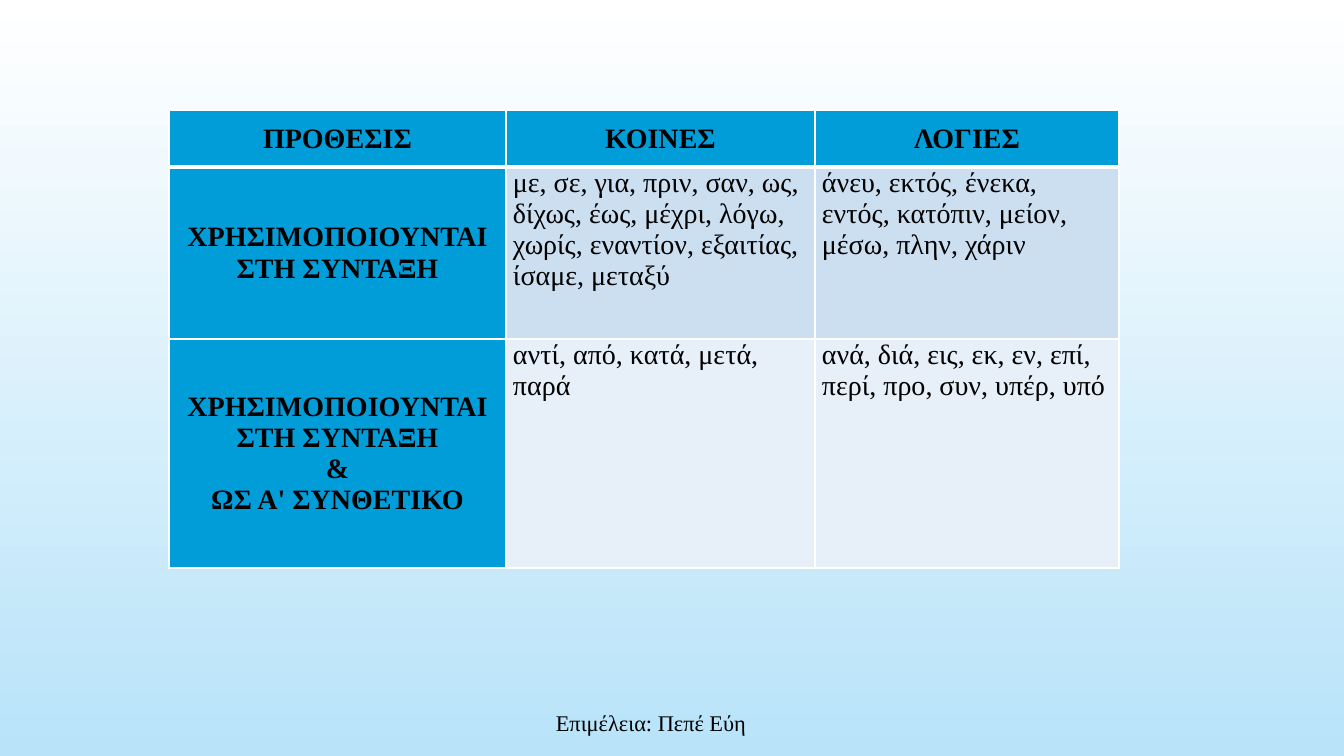
import dataclasses

import lxml.etree
import pptx
import pptx.dml.color
import pptx.enum.text
import pptx.oxml.ns
import pptx.util

EMU_PER_PX = 914400 / 100.8
CENTER = pptx.enum.text.PP_ALIGN.CENTER
LEFT = pptx.enum.text.PP_ALIGN.LEFT
MIDDLE = pptx.enum.text.MSO_ANCHOR.MIDDLE
TOP = pptx.enum.text.MSO_ANCHOR.TOP


@dataclasses.dataclass(frozen=True)
class Theme:
    font: str = "Times New Roman"
    text: str = "000000"
    heading_fill: str = "009DD9"
    row_fills: tuple = ("CCDFF1", "E7EFF8")
    border: str = "FFFFFF"
    background: tuple = ("FFFFFF", "B8E3F9")
    table_size: int = 20
    credit_size: int = 16


THEME = Theme()

HEADINGS = ("ΠΡΟΘΕΣΙΣ", "ΚΟΙΝΕΣ", "ΛΟΓΙΕΣ")
ROWS = (
    (
        "ΧΡΗΣΙΜΟΠΟΙΟΥΝΤΑΙ ΣΤΗ ΣΥΝΤΑΞΗ",
        "με, σε, για, πριν, σαν, ως, δίχως, έως, μέχρι, λόγω, χωρίς, "
        "εναντίον, εξαιτίας, ίσαμε, μεταξύ",
        "άνευ, εκτός, ένεκα, εντός, κατόπιν, μείον, μέσω, πλην, χάριν",
    ),
    (
        "ΧΡΗΣΙΜΟΠΟΙΟΥΝΤΑΙ ΣΤΗ ΣΥΝΤΑΞΗ\n&\nΩΣ Α' ΣΥΝΘΕΤΙΚΟ",
        "αντί, από, κατά, μετά, παρά",
        "ανά, διά, εις, εκ, εν, επί, περί, προ, συν, υπέρ, υπό",
    ),
)
COLUMN_WIDTHS = (337, 309, 304)
ROW_HEIGHTS = (57, 172, 229)


def px(length):
    return pptx.util.Emu(round(length * EMU_PER_PX))


def rgb(value):
    return pptx.dml.color.RGBColor.from_string(value)


def write_text(text_frame, text, *, size, bold=False, align=LEFT):
    text_frame.word_wrap = True
    text_frame.text = text
    for paragraph in text_frame.paragraphs:
        paragraph.alignment = align
        paragraph.font.name = THEME.font
        paragraph.font.size = pptx.util.Pt(size)
        paragraph.font.bold = bold
        paragraph.font.color.rgb = rgb(THEME.text)


def set_borders(cell, *, bottom):
    properties = cell._tc.get_or_add_tcPr()
    qn = pptx.oxml.ns.qn
    widths = {"a:lnL": 1, "a:lnR": 1, "a:lnT": 1, "a:lnB": bottom}
    for position, (tag, width) in enumerate(widths.items()):
        line = lxml.etree.Element(qn(tag), w=str(pptx.util.Pt(width)))
        fill = lxml.etree.SubElement(line, qn("a:solidFill"))
        lxml.etree.SubElement(fill, qn("a:srgbClr"), val=THEME.border)
        properties.insert(position, line)


def format_cell(cell, text, *, fill, heading, bottom=1):
    cell.margin_left = cell.margin_right = px(7)
    cell.margin_top = cell.margin_bottom = 0
    cell.vertical_anchor = MIDDLE if heading else TOP
    cell.fill.solid()
    cell.fill.fore_color.rgb = rgb(fill)
    set_borders(cell, bottom=bottom)
    write_text(cell.text_frame, text, size=THEME.table_size, bold=heading,
               align=CENTER if heading else LEFT)


def add_preposition_table(slide, left, top):
    table = slide.shapes.add_table(
        len(ROW_HEIGHTS), len(COLUMN_WIDTHS), px(left), px(top),
        px(sum(COLUMN_WIDTHS)), px(sum(ROW_HEIGHTS))).table
    for column, width in zip(table.columns, COLUMN_WIDTHS):
        column.width = px(width)
    for row, height in zip(table.rows, ROW_HEIGHTS):
        row.height = px(height)
    for column_index, heading in enumerate(HEADINGS):
        format_cell(table.cell(0, column_index), heading,
                    fill=THEME.heading_fill, heading=True, bottom=3)
    for row_index, (texts, row_fill) in enumerate(zip(ROWS, THEME.row_fills), 1):
        for column_index, text in enumerate(texts):
            heading = column_index == 0
            format_cell(table.cell(row_index, column_index), text,
                        fill=THEME.heading_fill if heading else row_fill,
                        heading=heading)


def add_credit(slide, text, left, top, width, height):
    box = slide.shapes.add_textbox(px(left), px(top), px(width), px(height))
    box.text_frame.vertical_anchor = MIDDLE
    write_text(box.text_frame, text, size=THEME.credit_size, align=CENTER)


def paint_background(slide):
    fill = slide.background.fill
    fill.gradient()
    fill.gradient_angle = 270
    for position, (stop, color) in enumerate(zip(fill.gradient_stops, THEME.background)):
        stop.position = position
        stop.color.rgb = rgb(color)


def main():
    presentation = pptx.Presentation()
    presentation.slide_width = px(1344)
    presentation.slide_height = px(756)
    slide = presentation.slides.add_slide(presentation.slide_layouts[6])
    paint_background(slide)
    add_credit(slide, "Επιμέλεια: Πεπέ Εύη", 283, 703, 736, 40)
    add_preposition_table(slide, 169, 110)
    presentation.save("out.pptx")


if __name__ == "__main__":
    main()
